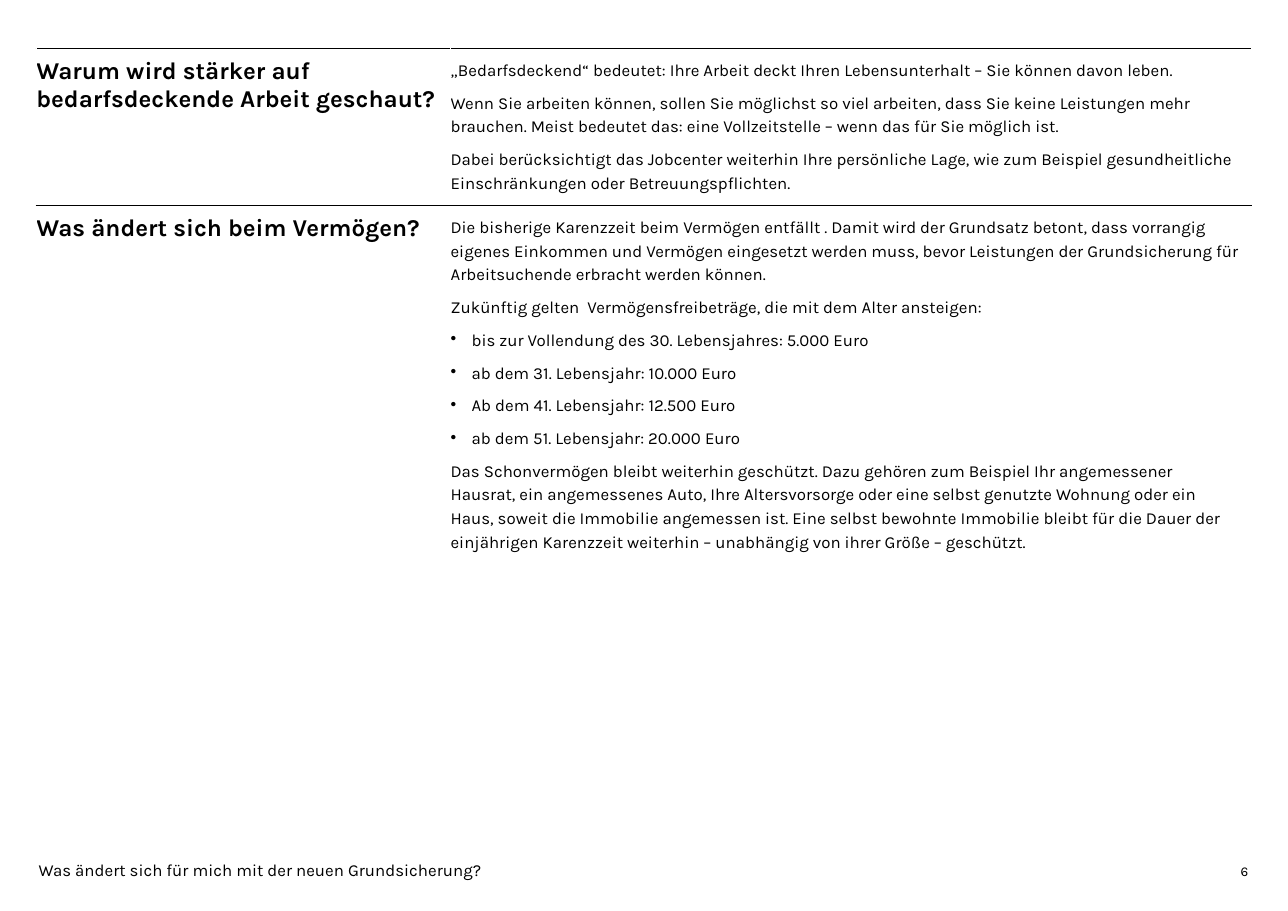
from dataclasses import dataclass

from lxml import etree
from pptx import Presentation
from pptx.dml.color import RGBColor
from pptx.enum.text import MSO_ANCHOR, PP_ALIGN
from pptx.oxml.ns import qn
from pptx.util import Inches, Pt

LEFT, RIGHT = PP_ALIGN.LEFT, PP_ALIGN.RIGHT
BOTTOM = MSO_ANCHOR.BOTTOM
FONT = "Karla"
COLORS = {"ink": "000000"}
HEAD, BODY, PAGE = 15.8, 11, 8.8
INDENT = Inches(0.19)


@dataclass
class Item:
    text: str
    bullet: bool = False


@dataclass
class Topic:
    title: str
    height: float
    items: list[Item]


@dataclass
class Label:
    text: str
    left: float
    top: float
    width: float
    size: float
    align: PP_ALIGN


TOPICS = [
    Topic("Warum wird stärker auf bedarfsdeckende Arbeit geschaut?", 1.39, [
        Item("„Bedarfsdeckend“ bedeutet: Ihre Arbeit deckt Ihren Lebensunterhalt – "
             "Sie können davon leben."),
        Item("Wenn Sie arbeiten können, sollen Sie möglichst so viel arbeiten, dass Sie "
             "keine Leistungen mehr brauchen. Meist bedeutet das: eine Vollzeitstelle – "
             "wenn das für Sie möglich ist."),
        Item("Dabei berücksichtigt das Jobcenter weiterhin Ihre persönliche Lage, wie zum "
             "Beispiel gesundheitliche Einschränkungen oder Betreuungspflichten."),
    ]),
    Topic("Was ändert sich beim Vermögen?", 3.31, [
        Item("Die bisherige Karenzzeit beim Vermögen entfällt . Damit wird der Grundsatz "
             "betont, dass vorrangig eigenes Einkommen und Vermögen eingesetzt werden muss, "
             "bevor Leistungen der Grundsicherung für Arbeitsuchende erbracht werden können."),
        Item("Zukünftig gelten  Vermögensfreibeträge, die mit dem Alter ansteigen:"),
        Item("bis zur Vollendung des 30. Lebensjahres: 5.000 Euro", True),
        Item("ab dem 31. Lebensjahr: 10.000 Euro", True),
        Item("Ab dem 41. Lebensjahr: 12.500 Euro", True),
        Item("ab dem 51. Lebensjahr: 20.000 Euro", True),
        Item("Das Schonvermögen bleibt weiterhin geschützt. Dazu gehören zum Beispiel Ihr "
             "angemessener Hausrat, ein angemessenes Auto, Ihre Altersvorsorge oder eine "
             "selbst genutzte Wohnung oder ein Haus, soweit die Immobilie angemessen ist. "
             "Eine selbst bewohnte Immobilie bleibt für die Dauer der einjährigen "
             "Karenzzeit weiterhin – unabhängig von ihrer Größe – geschützt."),
    ]),
]
LABELS = [
    Label("Was ändert sich für mich mit der neuen Grundsicherung?",
          0.35, 7.76, 7.56, BODY, LEFT),
    Label("6", 9.78, 7.75, 1.55, PAGE, RIGHT),
]
WIDTHS = [3.76, 7.27]


def set_font(para, size: float, bold: bool = False) -> None:
    font = para.font
    font.name, font.size, font.bold = FONT, Pt(size), bold
    font.color.rgb = RGBColor.from_string(COLORS["ink"])


def add_bullet(para) -> None:
    props = para._p.get_or_add_pPr()
    props.set("marL", str(INDENT))
    props.set("indent", str(-INDENT))
    etree.SubElement(props, qn("a:buChar"), char="•")


def add_rule(cell, side: str, place: int) -> None:
    line = etree.Element(qn(f"a:{side}"), w=str(Pt(1)))
    fill = etree.SubElement(line, qn("a:solidFill"))
    etree.SubElement(fill, qn("a:srgbClr"), val=COLORS["ink"])
    cell._tc.get_or_add_tcPr().insert(place, line)


def style_cell(cell, last: bool) -> None:
    cell.margin_left, cell.margin_right = 0, Inches(0.1)
    cell.margin_top = cell.margin_bottom = Inches(0.08)
    cell.fill.background()
    add_rule(cell, "lnT", 0)
    if not last:
        add_rule(cell, "lnB", 1)


def fill_body(frame, items: list[Item]) -> None:
    for i, item in enumerate(items):
        para = frame.add_paragraph() if i else frame.paragraphs[0]
        para.text = item.text
        if item.bullet:
            add_bullet(para)
        para.line_spacing, para.space_after = 1.2, Pt(6)
        set_font(para, BODY)


def add_topics(slide, topics: list[Topic]) -> None:
    height = sum(topic.height for topic in topics)
    table = slide.shapes.add_table(
        len(topics), len(WIDTHS), Inches(0.33), Inches(0.44),
        Inches(sum(WIDTHS)), Inches(height)).table
    table.first_row = table.horz_banding = False
    for col, width in zip(table.columns, WIDTHS):
        col.width = Inches(width)
    for row, topic in zip(table.rows, topics):
        row.height = Inches(topic.height)
        for cell in row.cells:
            style_cell(cell, topic is topics[-1])
        title, body = row.cells
        title.text = topic.title
        set_font(title.text_frame.paragraphs[0], HEAD, True)
        fill_body(body.text_frame, topic.items)


def add_label(slide, label: Label) -> None:
    box = slide.shapes.add_textbox(
        Inches(label.left), Inches(label.top), Inches(label.width), Inches(0.23))
    frame = box.text_frame
    frame.word_wrap, frame.vertical_anchor = True, BOTTOM
    frame.margin_left = frame.margin_right = 0
    frame.margin_top = frame.margin_bottom = 0
    para = frame.paragraphs[0]
    para.text, para.alignment = label.text, label.align
    set_font(para, label.size)


def main() -> None:
    deck = Presentation()
    deck.slide_width, deck.slide_height = Inches(11.69), Inches(8.27)
    slide = deck.slides.add_slide(deck.slide_layouts[6])

    # Footer and page number
    for label in LABELS:
        add_label(slide, label)

    # Questions and answers
    add_topics(slide, TOPICS)

    deck.save("out.pptx")


if __name__ == "__main__":
    main()
